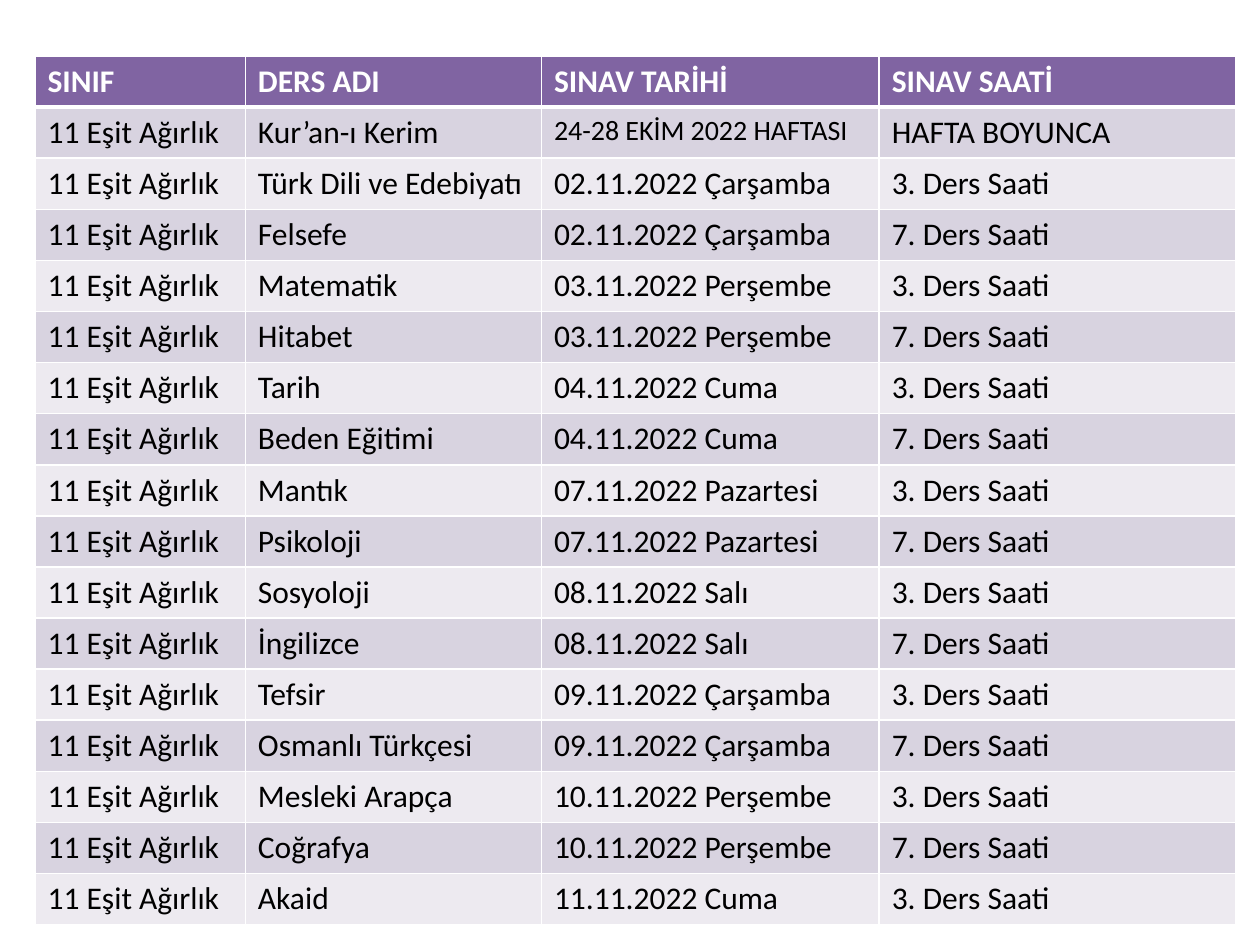
from dataclasses import dataclass

from lxml import etree
from pptx import Presentation
from pptx.dml.color import RGBColor
from pptx.oxml.ns import qn
from pptx.util import Pt

FONT = "Calibri"
WHITE, BLACK, PURPLE = "FFFFFF", "000000", "8064A2"
BANDS = ("EDEAF0", "D8D3E0")
LEFT, TOP, HIGH = 20, 32, 29.2
WIDTHS = (120.2, 169.2, 193, 203.8)
HEADS = ("SINIF", "DERS ADI", "SINAV TARİHİ", "SINAV SAATİ")
GROUP = "11 Eşit Ağırlık"
THIRD, LAST = "3. Ders Saati", "7. Ders Saati"


@dataclass
class Exam:
    name: str
    date: str
    time: str
    size: float = 18


@dataclass
class Look:
    fill: str
    ink: str
    bold: bool = False
    top: float = 1
    base: float = 1


EXAMS = (
    Exam("Kur’an-ı Kerim", "24-28 EKİM 2022 HAFTASI", "HAFTA BOYUNCA", 16),
    Exam("Türk Dili ve Edebiyatı", "02.11.2022 Çarşamba", THIRD),
    Exam("Felsefe", "02.11.2022 Çarşamba", LAST),
    Exam("Matematik", "03.11.2022 Perşembe", THIRD),
    Exam("Hitabet", "03.11.2022 Perşembe", LAST),
    Exam("Tarih", "04.11.2022 Cuma", THIRD),
    Exam("Beden Eğitimi", "04.11.2022 Cuma", LAST),
    Exam("Mantık", "07.11.2022 Pazartesi", THIRD),
    Exam("Psikoloji", "07.11.2022 Pazartesi", LAST),
    Exam("Sosyoloji", "08.11.2022 Salı", THIRD),
    Exam("İngilizce", "08.11.2022 Salı", LAST),
    Exam("Tefsir", "09.11.2022 Çarşamba", THIRD),
    Exam("Osmanlı Türkçesi", "09.11.2022 Çarşamba", LAST),
    Exam("Mesleki Arapça", "10.11.2022 Perşembe", THIRD),
    Exam("Coğrafya", "10.11.2022 Perşembe", LAST),
    Exam("Akaid", "11.11.2022 Cuma", THIRD),
)


def color(code: str) -> RGBColor:
    return RGBColor.from_string(code)


def add_edge(cell, side: str, width: float) -> None:
    props = cell._tc.get_or_add_tcPr()
    line = etree.SubElement(props, qn(f"a:ln{side}"), w=str(Pt(width)))
    fill = etree.SubElement(line, qn("a:solidFill"))
    etree.SubElement(fill, qn("a:srgbClr"), val=WHITE)


def draw_cell(cell, text: str, look: Look, size: float = 18) -> None:
    for side, width in (("L", 1), ("R", 1), ("T", look.top), ("B", look.base)):
        add_edge(cell, side, width)
    cell.fill.solid()
    cell.fill.fore_color.rgb = color(look.fill)
    para = cell.text_frame.paragraphs[0]
    para.text = text
    font = para.font
    font.name, font.size, font.bold = FONT, Pt(size), look.bold
    font.color.rgb = color(look.ink)


def draw_table(slide) -> None:
    count = len(EXAMS) + 1
    frame = slide.shapes.add_table(
        count, len(HEADS), Pt(LEFT), Pt(TOP), Pt(sum(WIDTHS)), Pt(HIGH * count)
    )
    table = frame.table
    for col, width in zip(table.columns, WIDTHS):
        col.width = Pt(width)
    for row in table.rows:
        row.height = Pt(HIGH)
    head = Look(PURPLE, WHITE, bold=True, base=3)
    for col, text in enumerate(HEADS):
        draw_cell(table.cell(0, col), text, head)
    for row, exam in enumerate(EXAMS, 1):
        look = Look(BANDS[row % 2], BLACK, top=3 if row == 1 else 1)
        draw_cell(table.cell(row, 0), GROUP, look)
        draw_cell(table.cell(row, 1), exam.name, look)
        draw_cell(table.cell(row, 2), exam.date, look, exam.size)
        draw_cell(table.cell(row, 3), exam.time, look)


def main() -> None:
    deck = Presentation()
    deck.slide_width, deck.slide_height = Pt(720), Pt(540)
    draw_table(deck.slides.add_slide(deck.slide_layouts[6]))
    deck.save("out.pptx")


if __name__ == "__main__":
    main()
